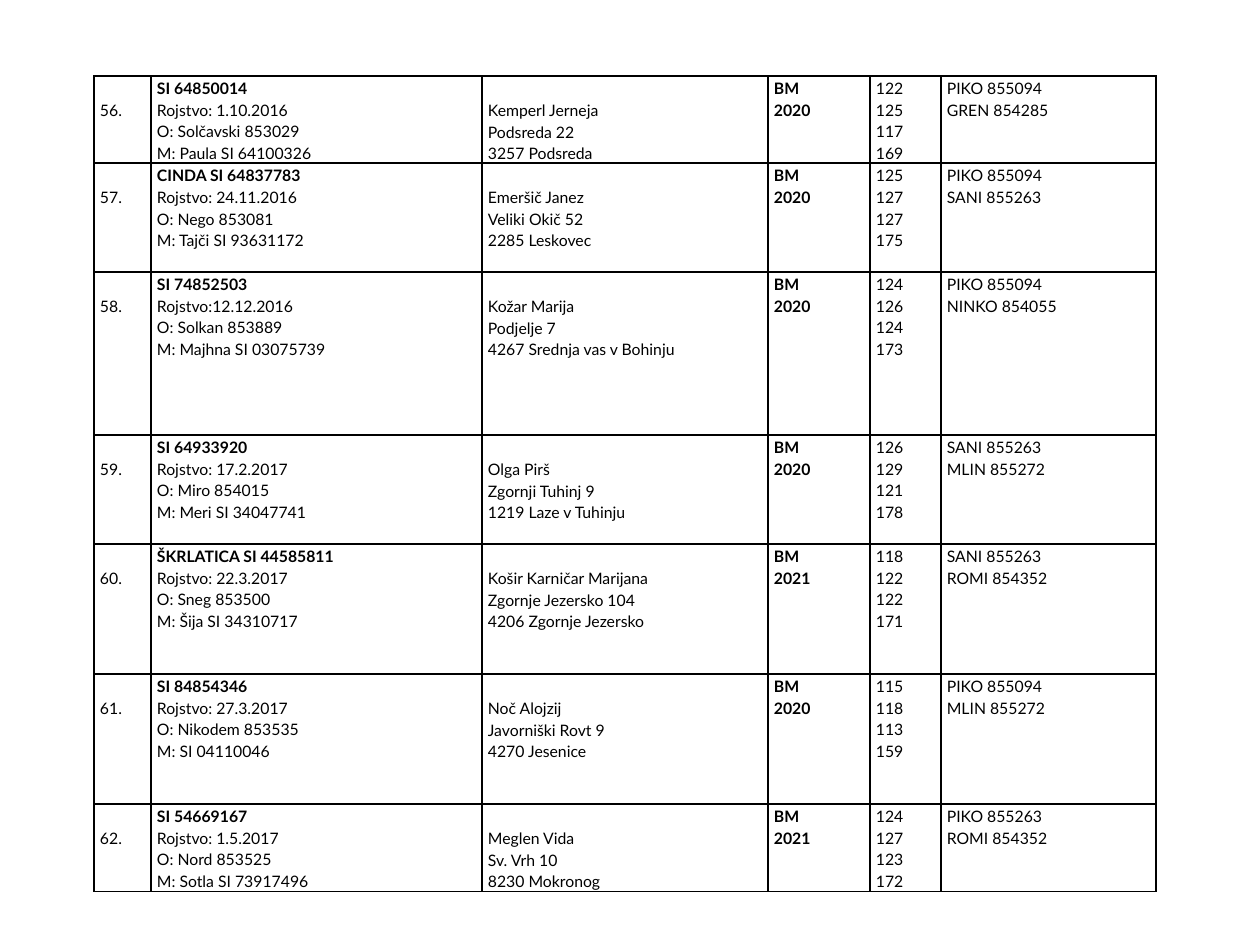
"""Build a one-slide register table of breeding animals."""
from dataclasses import dataclass

from lxml.etree import SubElement
from pptx import Presentation
from pptx.dml.color import RGBColor
from pptx.enum.text import PP_ALIGN
from pptx.oxml.ns import qn
from pptx.util import Pt

EMU_PER_PX = 914400 / 126
BLACK = RGBColor(0x00, 0x00, 0x00)
FONT = "Lato"
LEFT, TOP = 94, 76
COL_WIDTHS = (57, 331, 286, 102, 71, 215)
SIDE_MARGIN = 6
LINE_HEIGHT = 22


@dataclass(frozen=True)
class Animal:
    """One row of the register."""
    height: int
    number: str
    identity: str
    descent: tuple[str, ...]
    owner: tuple[str, ...]
    year: str
    measures: tuple[str, ...]
    mates: tuple[str, ...]


ANIMALS = (
    Animal(87, "56.", "SI 64850014",
           ("Rojstvo: 1.10.2016", "O: Solčavski 853029", "M: Paula SI 64100326"),
           ("Kemperl Jerneja", "Podsreda 22", "3257 Podsreda"),
           "2020", ("122", "125", "117", "169"), ("PIKO 855094", "GREN 854285")),
    Animal(109, "57.", "CINDA SI 64837783",
           ("Rojstvo: 24.11.2016", "O: Nego 853081", "M: Tajči SI 93631172"),
           ("Emeršič Janez", "Veliki Okič 52", "2285 Leskovec"),
           "2020", ("125", "127", "127", "175"), ("PIKO 855094", "SANI 855263")),
    Animal(163, "58.", "SI 74852503",
           ("Rojstvo:12.12.2016", "O: Solkan 853889", "M: Majhna SI 03075739"),
           ("Kožar Marija", "Podjelje 7", "4267 Srednja vas v Bohinju"),
           "2020", ("124", "126", "124", "173"), ("PIKO 855094", "NINKO 854055")),
    Animal(109, "59.", "SI 64933920",
           ("Rojstvo: 17.2.2017", "O: Miro 854015", "M: Meri SI 34047741"),
           ("Olga Pirš", "Zgornji Tuhinj 9", "1219 Laze v Tuhinju"),
           "2020", ("126", "129", "121", "178"), ("SANI 855263", "MLIN 855272")),
    Animal(130, "60.", "ŠKRLATICA SI 44585811",
           ("Rojstvo: 22.3.2017", "O: Sneg 853500", "M: Šija SI 34310717"),
           ("Košir Karničar Marijana", "Zgornje Jezersko 104", "4206 Zgornje Jezersko"),
           "2021", ("118", "122", "122", "171"), ("SANI 855263", "ROMI 854352")),
    Animal(130, "61.", "SI 84854346",
           ("Rojstvo: 27.3.2017", "O: Nikodem 853535", "M: SI 04110046"),
           ("Noč Alojzij", "Javorniški Rovt 9", "4270 Jesenice"),
           "2020", ("115", "118", "113", "159"), ("PIKO 855094", "MLIN 855272")),
    Animal(87, "62.", "SI 54669167",
           ("Rojstvo: 1.5.2017", "O: Nord 853525", "M: Sotla SI 73917496"),
           ("Meglen Vida", "Sv. Vrh 10", "8230 Mokronog"),
           "2021", ("124", "127", "123", "172"), ("PIKO 855263", "ROMI 854352")),
)


def px(length: int) -> int:
    """Turn px into EMU."""
    return round(length * EMU_PER_PX)


def add_borders(cell) -> None:
    """Draw a thin black line on all four sides of a cell."""
    tc_pr = cell._tc.get_or_add_tcPr()
    for side in ("a:lnL", "a:lnR", "a:lnT", "a:lnB"):
        ln = SubElement(tc_pr, qn(side), w=str(Pt(1)))
        fill = SubElement(ln, qn("a:solidFill"))
        SubElement(fill, qn("a:srgbClr"), val=str(BLACK))


def write_cell(cell, lines: tuple[str, ...], bold_lines: int = 0, offset: int = 0) -> None:
    """Write lines into a cell, the first ones bold, starting below an offset."""
    add_borders(cell)
    cell.fill.background()
    cell.margin_left = cell.margin_right = px(SIDE_MARGIN)
    cell.margin_top, cell.margin_bottom = px(offset), 0
    tf = cell.text_frame
    tf.text = "\n".join(lines)
    for i, p in enumerate(tf.paragraphs):
        p.alignment = PP_ALIGN.JUSTIFY
        p.line_spacing = 1.15
        for r in p.runs:
            r.font.name = FONT
            r.font.size = Pt(9)
            r.font.bold = i < bold_lines
            r.font.color.rgb = BLACK


def write_animal(cells, animal: Animal) -> None:
    """Fill one table row with an animal's data."""
    number, identity, owner, year, measures, mates = cells
    write_cell(number, (animal.number,), offset=LINE_HEIGHT)
    write_cell(identity, (animal.identity, *animal.descent), bold_lines=1)
    write_cell(owner, animal.owner, offset=LINE_HEIGHT)
    write_cell(year, ("BM", animal.year), bold_lines=2)
    write_cell(measures, animal.measures)
    write_cell(mates, animal.mates)


def main() -> None:
    """Build and save the slide."""
    prs = Presentation()
    prs.slide_width, prs.slide_height = px(1260), px(945)
    s = prs.slides.add_slide(prs.slide_layouts[6])
    height = sum(animal.height for animal in ANIMALS)
    table = s.shapes.add_table(len(ANIMALS), len(COL_WIDTHS), px(LEFT), px(TOP),
                               px(sum(COL_WIDTHS)), px(height)).table
    table.first_row = table.horz_banding = False
    for column, width in zip(table.columns, COL_WIDTHS):
        column.width = px(width)
    for row, animal in zip(table.rows, ANIMALS):
        row.height = px(animal.height)
        write_animal(row.cells, animal)
    prs.save("out.pptx")


if __name__ == "__main__":
    main()
